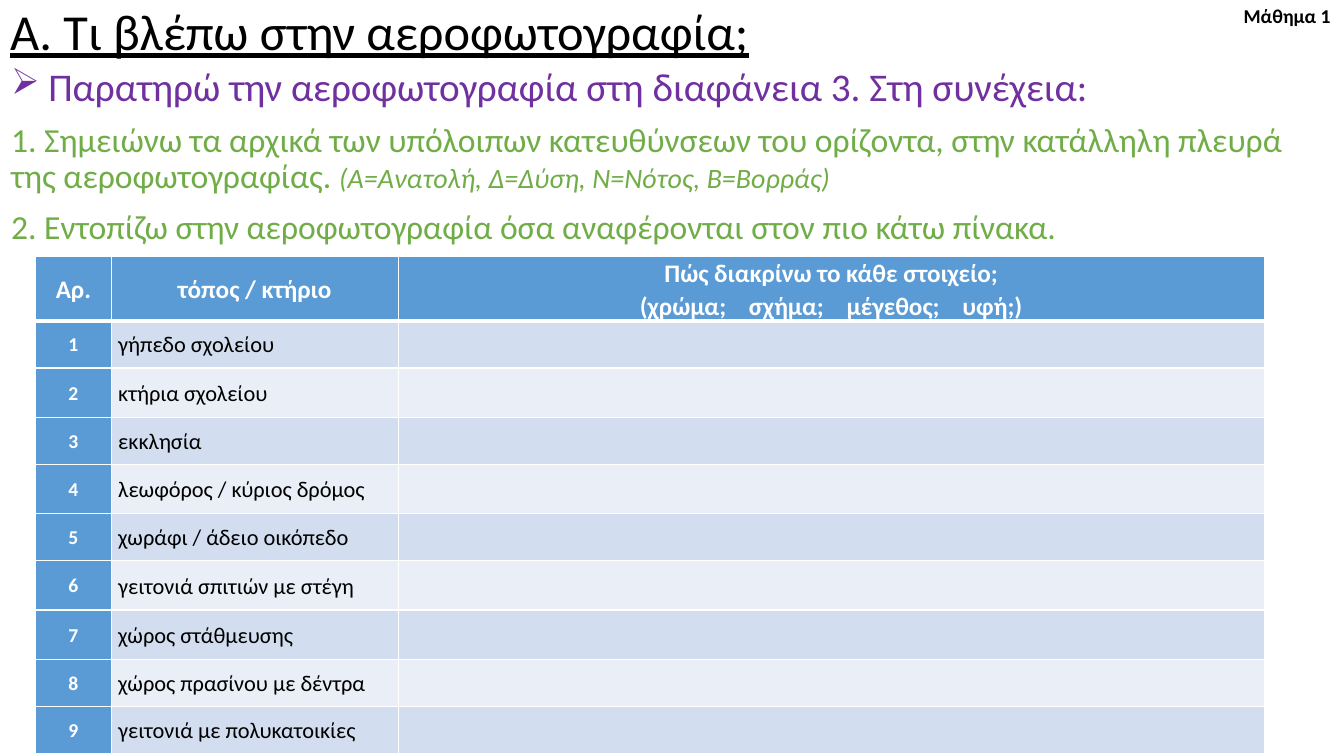
import pptx
import pptx.dml.color
import pptx.enum.text
import pptx.oxml
import pptx.oxml.ns
import pptx.util

Cm = pptx.util.Cm
Pt = pptx.util.Pt
ALIGN = pptx.enum.text.PP_ALIGN
ANCHOR = pptx.enum.text.MSO_ANCHOR
AUTO_SIZE = pptx.enum.text.MSO_AUTO_SIZE

FONT = "Calibri"
BLACK, WHITE, PURPLE, GREEN = "000000", "FFFFFF", "7030A0", "70AD47"
HEADER_BLUE, BAND_DARK, BAND_LIGHT = "5B9BD5", "D2DEEF", "EAEFF7"

TITLE = "Α. Τι βλέπω στην αεροφωτογραφία;"
LESSON = "Μάθημα 1"
# Each paragraph is a list of (text, font format).
INSTRUCTIONS = [
    [(" ", {"size": Pt(26), "color": PURPLE}),
     ("Παρατηρώ την αεροφωτογραφία στη διαφάνεια 3. Στη συνέχεια:",
      {"size": Pt(28), "color": PURPLE})],
    [("1. Σημειώνω τα αρχικά των υπόλοιπων κατευθύνσεων του ορίζοντα, "
      "στην κατάλληλη πλευρά της αεροφωτογραφίας. ",
      {"size": Pt(24), "color": GREEN}),
     ("(Α=Ανατολή, Δ=Δύση, Ν=Νότος, Β=Βορράς)",
      {"size": Pt(20), "color": GREEN, "italic": True})],
    [("2. Εντοπίζω στην αεροφωτογραφία όσα αναφέρονται στον πιο κάτω πίνακα.",
      {"size": Pt(24), "color": GREEN})],
]
HEADERS = [
    ["Αρ."],
    ["τόπος / κτήριο"],
    ["Πώς διακρίνω το κάθε στοιχείο;", "(χρώμα;    σχήμα;    μέγεθος;    υφή;)"],
]
PLACES = [
    "γήπεδο σχολείου", "κτήρια σχολείου", "εκκλησία",
    "λεωφόρος / κύριος δρόμος", "χωράφι / άδειο οικόπεδο",
    "γειτονιά σπιτιών με στέγη", "χώρος στάθμευσης",
    "χώρος πρασίνου με δέντρα", "γειτονιά με πολυκατοικίες",
]
COLUMN_WIDTHS = [1.9, 7.24, 21.82]
ROW_HEIGHTS = [1.52, 1.19, 1.24, 1.19, 1.24, 1.19, 1.24, 1.24, 1.19, 1.19]


def rgb(color):
    return pptx.dml.color.RGBColor.from_string(color)


def set_attributes(target, values):
    for name, value in values.items():
        setattr(target, name, value)


def add_run(paragraph, text, color, **font_format):
    run = paragraph.add_run()
    run.text = text
    run.font.color.rgb = rgb(color)
    set_attributes(run.font, {"name": FONT, **font_format})


def set_bullet(paragraph, character, indent):
    properties = paragraph._p.get_or_add_pPr()
    properties.set("marL", str(indent))
    properties.set("indent", str(-indent))
    bullet = pptx.oxml.parse_xml(
        f'<a:buChar {pptx.oxml.ns.nsdecls("a")} char="{character}"/>')
    properties.append(bullet)


def set_borders(cell, bottom_width):
    """Draw white borders, 1 pt wide except at the bottom."""
    properties = cell._tc.get_or_add_tcPr()
    widths = {"lnL": Pt(1), "lnR": Pt(1), "lnT": Pt(1), "lnB": bottom_width}
    for side, width in widths.items():
        properties.append(pptx.oxml.parse_xml(
            f'<a:{side} {pptx.oxml.ns.nsdecls("a")} w="{width}"><a:solidFill>'
            f'<a:srgbClr val="{WHITE}"/></a:solidFill></a:{side}>'))


def place_title(slide, left, top, width, height):
    title = slide.shapes.title
    set_attributes(title, {"left": left, "top": top, "width": width, "height": height})
    set_attributes(title.text_frame, {
        "vertical_anchor": ANCHOR.MIDDLE, "auto_size": AUTO_SIZE.NONE, "word_wrap": True})
    paragraph = title.text_frame.paragraphs[0]
    set_attributes(paragraph, {"alignment": ALIGN.LEFT, "line_spacing": 0.9})
    add_run(paragraph, TITLE, BLACK, size=Pt(36), underline=True)


def add_instructions(slide, left, top, width, height):
    frame = slide.shapes.add_textbox(left, top, width, height).text_frame
    frame.word_wrap = True
    for index, runs in enumerate(INSTRUCTIONS):
        paragraph = frame.add_paragraph() if index else frame.paragraphs[0]
        set_attributes(paragraph, {"line_spacing": 0.9, "space_before": Pt(10)})
        for text, font_format in runs:
            add_run(paragraph, text, **font_format)
    set_bullet(frame.paragraphs[0], "➢", Cm(0.64))


def fill_cell(cell, lines, fill, alignment=ALIGN.LEFT, bottom_width=Pt(1), **font_format):
    set_borders(cell, bottom_width)
    cell.fill.solid()
    cell.fill.fore_color.rgb = rgb(fill)
    set_attributes(cell, {
        "vertical_anchor": ANCHOR.MIDDLE, "margin_left": Cm(0.18),
        "margin_right": Cm(0.18), "margin_top": 0, "margin_bottom": 0})
    for index, line in enumerate(lines):
        frame = cell.text_frame
        paragraph = frame.add_paragraph() if index else frame.paragraphs[0]
        set_attributes(paragraph, {"alignment": alignment, "line_spacing": 1.07})
        add_run(paragraph, line, **font_format)


def add_places_table(slide, left, top, width, height):
    table = slide.shapes.add_table(
        len(ROW_HEIGHTS), len(COLUMN_WIDTHS), left, top, width, height).table
    set_attributes(table, {"first_row": False, "horz_banding": False})
    for column, column_width in zip(table.columns, COLUMN_WIDTHS):
        column.width = Cm(column_width)
    for row, row_height in zip(table.rows, ROW_HEIGHTS):
        row.height = Cm(row_height)

    heading = {"fill": HEADER_BLUE, "alignment": ALIGN.CENTER, "color": WHITE, "bold": True}
    for column, lines in enumerate(HEADERS):
        fill_cell(table.cell(0, column), lines, size=Pt(18), bottom_width=Pt(3), **heading)
    for row, place in enumerate(PLACES, start=1):
        band = BAND_DARK if row % 2 else BAND_LIGHT
        fill_cell(table.cell(row, 0), [str(row)], size=Pt(14), **heading)
        fill_cell(table.cell(row, 1), [place], band, size=Pt(16), color=BLACK)
        fill_cell(table.cell(row, 2), [], band)


def add_lesson_label(slide, left, top, width, height):
    frame = slide.shapes.add_textbox(left, top, width, height).text_frame
    set_attributes(frame, {"word_wrap": False, "auto_size": AUTO_SIZE.SHAPE_TO_FIT_TEXT})
    add_run(frame.paragraphs[0], LESSON, BLACK, size=Pt(14), bold=True)


def build_worksheet_slide(presentation):
    slide = presentation.slides.add_slide(presentation.slide_layouts[5])
    place_title(slide, Cm(0), Cm(-0.74), Cm(23.8), Cm(3.18))
    add_instructions(slide, Cm(0.03), Cm(1.57), Cm(33.83), Cm(17.04))
    add_places_table(slide, Cm(0.9), Cm(6.45), Cm(sum(COLUMN_WIDTHS)), Cm(sum(ROW_HEIGHTS)))
    add_lesson_label(slide, Cm(31.09), Cm(-0.03), Cm(2.77), Cm(0.86))


def main():
    presentation = pptx.Presentation()
    set_attributes(presentation, {"slide_width": Cm(33.87), "slide_height": Cm(19.05)})
    build_worksheet_slide(presentation)
    presentation.save("out.pptx")


if __name__ == "__main__":
    main()
